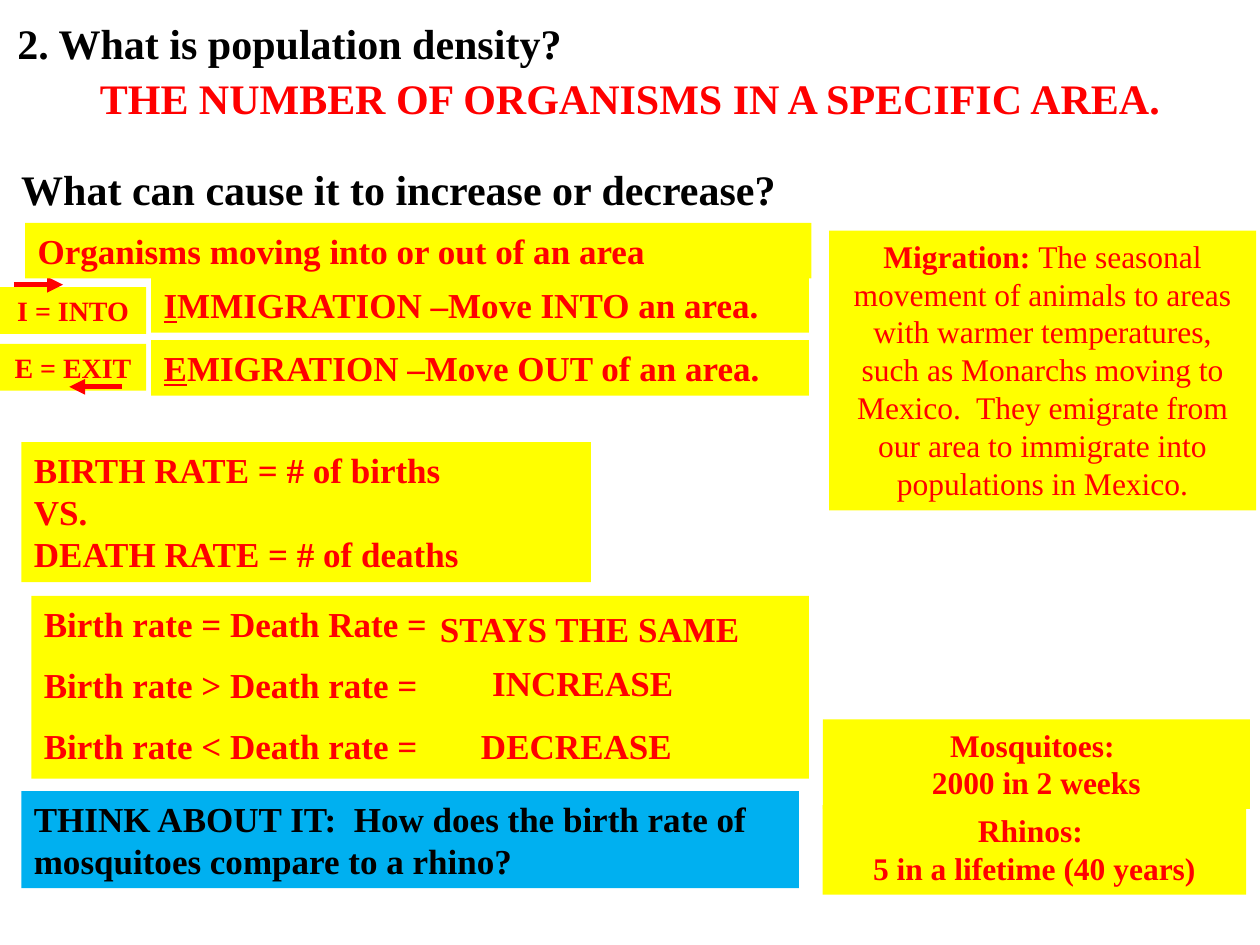
from lxml import etree
from pptx import Presentation
from pptx.dml.color import RGBColor
from pptx.enum import shapes, text
from pptx.oxml import ns
from pptx.util import Inches, Pt

RED, BLACK, YELLOW, BLUE = "FF0000", "000000", "FFFF00", "00B0F0"
LEFT, CENTER = text.PP_ALIGN.LEFT, text.PP_ALIGN.CENTER


def rgb(value):
    return RGBColor.from_string(value)


def add_box(parent, at, paragraphs, size=20, color=RED, fill=YELLOW, align=LEFT):
    x, y, w, h = (Inches(v) for v in at)
    if fill:
        sp = parent.add_shape(shapes.MSO_SHAPE.RECTANGLE, x, y, w, h)
        sp.fill.solid()
        sp.fill.fore_color.rgb = rgb(fill)
        sp.line.fill.background()
        sp.shadow.inherit = False
    else:
        sp = parent.add_textbox(x, y, w, h)
    tf = sp.text_frame
    tf.word_wrap = True
    tf.vertical_anchor = text.MSO_ANCHOR.TOP
    for i, content in enumerate(paragraphs):
        p = tf.add_paragraph() if i else tf.paragraphs[0]
        p.text = content
        p.alignment = align
        p.space_before = Pt(11 if i else 0)
        p.font.name = "Times New Roman"
        p.font.size = Pt(size)
        p.font.bold = True
        p.font.color.rgb = rgb(color)
    return tf.paragraphs[0]


prs = Presentation()
prs.slide_width, prs.slide_height = Inches(10), Inches(7.5)
s = prs.slides.add_slide(prs.slide_layouts[6])

add_box(s.shapes, (0.04, 0.09, 9.17, 0.5), ["2. What is population density?"], 24, BLACK, None)
add_box(s.shapes, (0.59, 0.53, 8.82, 0.5), ["THE NUMBER OF ORGANISMS IN A SPECIFIC AREA."], 24, RED, None, CENTER)
add_box(s.shapes, (0.07, 1.25, 9.17, 0.5), ["What can cause it to increase or decrease?"], 24, BLACK, None)

for y, initial, rest in [
    (2.2, "I", "MMIGRATION –Move INTO an area."),
    (2.7, "E", "MIGRATION –Move OUT of an area."),
]:
    p = add_box(s.shapes, (1.2, y, 5.22, 0.44), [initial])
    p.runs[0].font.underline = True
    p.add_run().text = rest

add_box(s.shapes, (0.17, 3.51, 4.52, 1.11), ["BIRTH RATE = # of births\nVS.\nDEATH RATE = # of deaths"])
add_box(s.shapes, (0.25, 4.73, 6.17, 1.45), [
    "Birth rate = Death Rate =",
    "Birth rate > Death rate =",
    "Birth rate < Death rate =",
])

for y, label, start, end, arrow_y in [
    (2.28, "I = INTO", 0.11, 0.5, 2.26),
    (2.73, "E = EXIT", 0.97, 0.55, 3.07),
]:
    group = s.shapes.add_group_shape()
    add_box(group.shapes, (0, y, 1.16, 0.37), [label], 16, align=CENTER)
    arrow = group.shapes.add_connector(
        shapes.MSO_CONNECTOR.STRAIGHT, Inches(start), Inches(arrow_y), Inches(end), Inches(arrow_y))
    arrow.line.color.rgb = rgb(RED)
    arrow.line.width = Pt(3)
    etree.SubElement(arrow.line._get_or_add_ln(), ns.qn("a:tailEnd"), type="triangle")
    etree.SubElement(arrow._element.spPr, ns.qn("a:effectLst"))

add_box(s.shapes, (0.17, 6.28, 6.17, 0.77),
        ["THINK ABOUT IT:  How does the birth rate of mosquitoes compare to a rhino?"], 20, BLACK, BLUE)

for at, answer, size in [
    ((3.37, 5.2, 2.51, 0.44), "INCREASE", 20),
    ((3.32, 5.7, 2.51, 0.44), "DECREASE", 20),
    ((6.53, 6.39, 3.36, 0.71), "Rhinos: \n5 in a lifetime (40 years)", 18),
    ((6.53, 5.71, 3.39, 0.71), "Mosquitoes: \n2000 in 2 weeks", 18),
    ((3.37, 4.77, 2.62, 0.44), "STAYS THE SAME", 20),
]:
    add_box(s.shapes, at, [answer], size, align=CENTER)

add_box(s.shapes, (0.2, 1.77, 6.24, 0.44), ["Organisms moving into or out of an area"])

p = add_box(s.shapes, (6.58, 1.83, 3.39, 2.22), ["Migration: "], 18, align=CENTER)
r = p.add_run()
r.text = (
    "The seasonal movement of animals to areas with warmer temperatures, "
    "such as Monarchs moving to Mexico.  They emigrate from our area to "
    "immigrate into populations in Mexico."
)
r.font.bold = False

prs.save("out.pptx")
